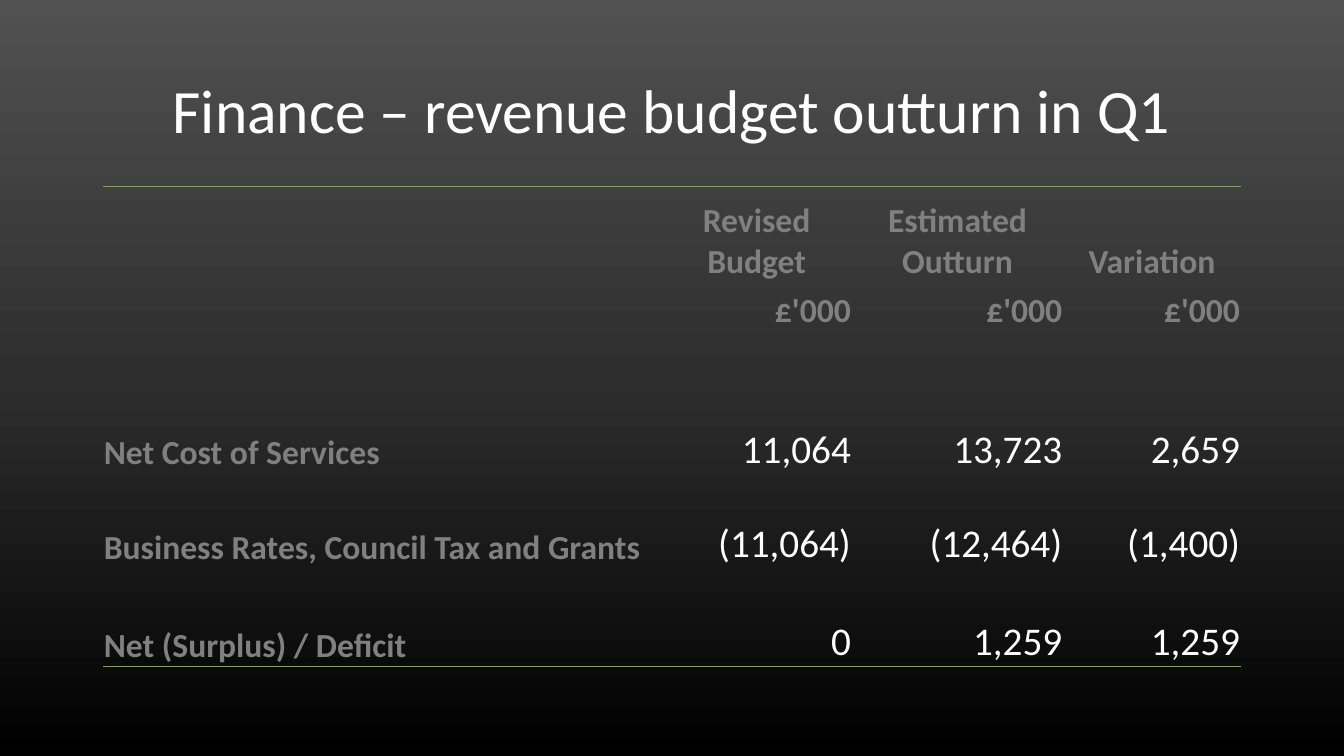
from copy import deepcopy
from dataclasses import dataclass

from lxml.etree import SubElement
from pptx import Presentation
from pptx.dml.color import RGBColor
from pptx.enum.text import MSO_ANCHOR, PP_ALIGN
from pptx.oxml import parse_xml
from pptx.oxml.ns import nsdecls, qn
from pptx.util import Pt


@dataclass(frozen=True)
class Theme:
    font: str = "Calibri"
    title_size: int = 44
    label_size: int = 24
    figure_size: int = 28
    text: str = "FFFFFF"
    label: str = "808080"
    rule: str = "70AD47"
    backdrop: tuple = ("515151", "2E2E2E", "000000")


theme = Theme()


def write(frame, text, size, color, align, bold=False):
    frame.text = text
    paragraph = frame.paragraphs[0]
    paragraph.alignment = align
    font = paragraph.runs[0].font
    font.name, font.size, font.bold = theme.font, Pt(size), bold
    font.color.rgb = RGBColor.from_string(color)


def add_rule(cell, side):
    rule = parse_xml(
        f'<a:{side} {nsdecls("a")} w="{Pt(1)}"><a:solidFill>'
        f'<a:srgbClr val="{theme.rule}"/></a:solidFill></a:{side}>'
    )
    cell._tc.get_or_add_tcPr().insert(0, rule)


presentation = Presentation()
presentation.slide_width, presentation.slide_height = Pt(960), Pt(540)
slide = presentation.slides.add_slide(presentation.slide_layouts[6])

# Background: three-stop vertical gradient
backdrop = slide.background.fill
backdrop.gradient()
backdrop.gradient_angle = 270
stop_list = next(slide._element.iter(qn("a:gsLst")))
stop_list.insert(1, deepcopy(stop_list[0]))
for index, (stop, color) in enumerate(zip(backdrop.gradient_stops, theme.backdrop)):
    stop.position = index / 2
    stop.color.rgb = RGBColor.from_string(color)

# Title
title = slide.shapes.add_textbox(Pt(66), Pt(28.75), Pt(828), Pt(104.5)).text_frame
title.word_wrap = True
title.vertical_anchor = MSO_ANCHOR.MIDDLE
write(title, "Finance – revenue budget outturn in Q1", theme.title_size,
      theme.text, PP_ALIGN.CENTER)
title.paragraphs[0].line_spacing = 0.9

# Budget figures, with empty rows as spacers
spacer = [""] * 4
budget_rows = [
    (69, ["", "Revised Budget", "Estimated Outturn", "Variation"]),
    (34.5, ["", "£'000", "£'000", "£'000"]),
    (33.5, spacer),
    (33.5, spacer),
    (35, ["Net Cost of Services", "11,064", "13,723", "2,659"]),
    (67.5, ["Business Rates, Council Tax and Grants", "(11,064)", "(12,464)", "(1,400)"]),
    (35, spacer),
    (35, ["Net (Surplus) / Deficit", "0", "1,259", "1,259"]),
]
column_widths = [399, 136, 151, 127]
last_row = len(budget_rows) - 1

# Budget table, without style or banding
budget = slide.shapes.add_table(
    len(budget_rows), len(column_widths), Pt(73.5), Pt(133.2),
    Pt(sum(column_widths)), Pt(sum(height for height, _ in budget_rows)),
).table
budget.first_row = budget.horz_banding = False
properties = budget._tbl.tblPr
style_id = properties.find(qn("a:tableStyleId"))
if style_id is None:
    style_id = SubElement(properties, qn("a:tableStyleId"))
style_id.text = "{2D5ABB26-0587-4C30-8999-92F81FD0307C}"

for column, width in zip(budget.columns, column_widths):
    column.width = Pt(width)

for row, (height, entries) in enumerate(budget_rows):
    budget.rows[row].height = Pt(height)
    for col, entry in enumerate(entries):
        cell = budget.cell(row, col)
        cell.fill.background()
        cell.vertical_anchor = MSO_ANCHOR.BOTTOM
        cell.margin_left = cell.margin_right = cell.margin_top = Pt(0.7)
        cell.margin_bottom = 0
        if entry:
            is_label = row < 2 or col == 0
            align = (PP_ALIGN.LEFT if col == 0
                     else PP_ALIGN.CENTER if row == 0 else PP_ALIGN.RIGHT)
            write(cell.text_frame, entry,
                  theme.label_size if is_label else theme.figure_size,
                  theme.label if is_label else theme.text, align, is_label)
        if row == 0:
            add_rule(cell, "lnT")
        elif row == last_row:
            add_rule(cell, "lnB")

presentation.save("out.pptx")
